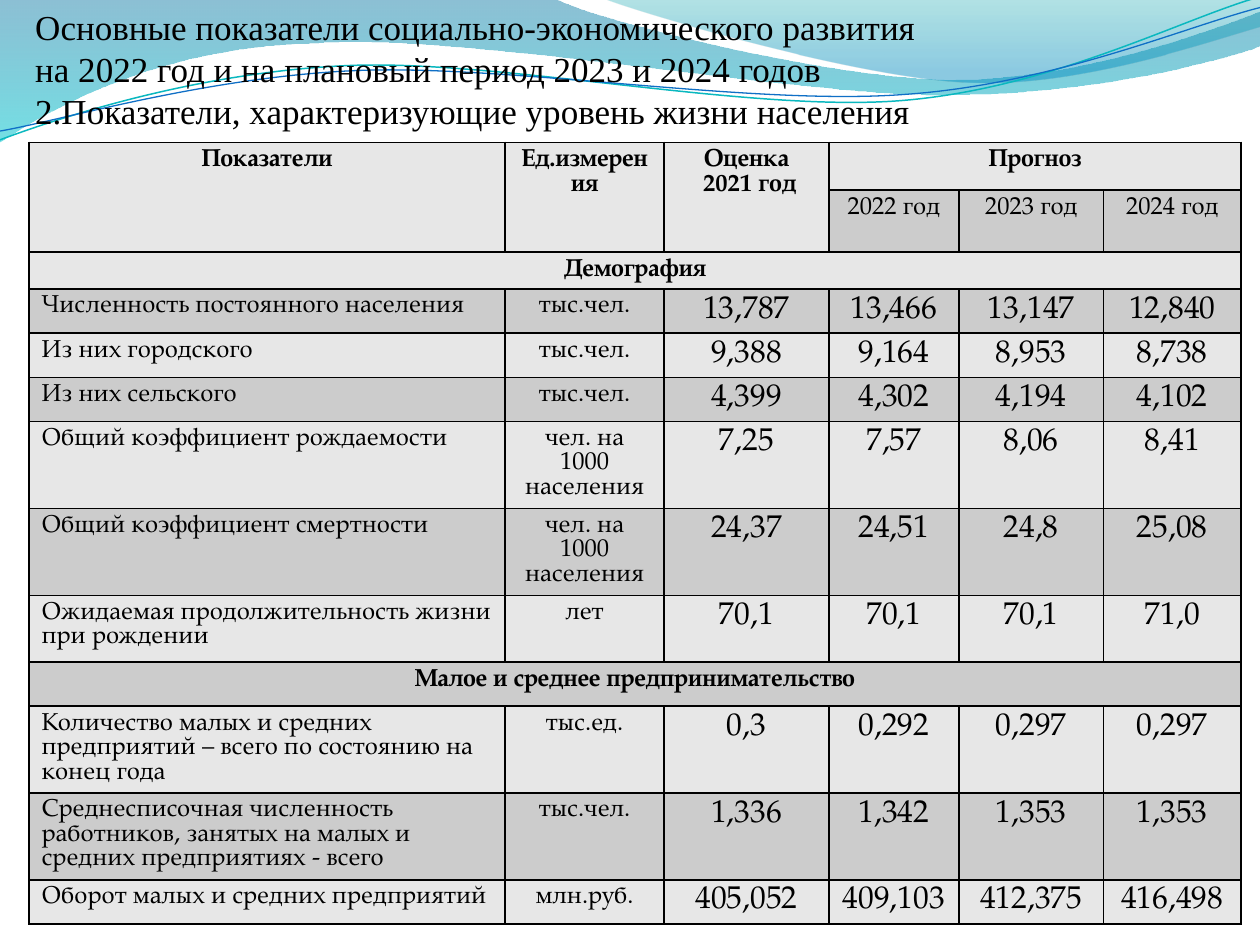
import math

import pptx
import pptx.dml.color
import pptx.enum.text
import pptx.oxml
import pptx.oxml.ns
import pptx.util
from pptx.util import Inches

TABLE_FONT = "TeX Gyre Pagella"
TITLE_FONT = "Times New Roman"
BLACK = "000000"
ROW_FILLS = ("E7E7E7", "CCCCCC")
CENTER = pptx.enum.text.PP_ALIGN.CENTER
LEFT = pptx.enum.text.PP_ALIGN.LEFT

TITLE = ("Основные показатели социально-экономического развития \v"
         "на 2022 год и на плановый период 2023 и 2024 годов \v"
         "2.Показатели, характеризующие уровень жизни населения")

COLUMN_WIDTHS = (3.78, 1.26, 1.31, 1.03, 1.15, 1.09)
ROW_HEIGHTS = (0.38, 0.47, 0.29, 0.35, 0.35, 0.35, 0.69, 0.69, 0.53, 0.35, 0.69, 0.69, 0.35)
ROWS = [
    ("Показатели", "Ед.измерения", "Оценка\n 2021 год", "Прогноз"),
    ("", "", "", "2022 год", "2023 год", "2024 год"),
    ("Демография",),
    ("Численность постоянного населения", "тыс.чел.", "13,787", "13,466", "13,147", "12,840"),
    ("Из них городского", "тыс.чел.", "9,388", "9,164", "8,953", "8,738"),
    ("Из них сельского", "тыс.чел.", "4,399", "4,302", "4,194", "4,102"),
    ("Общий коэффициент рождаемости", "чел. на 1000 населения", "7,25", "7,57", "8,06", "8,41"),
    ("Общий коэффициент смертности", "чел. на 1000 населения", "24,37", "24,51", "24,8", "25,08"),
    ("Ожидаемая продолжительность жизни при рождении", "лет", "70,1", "70,1", "70,1", "71,0"),
    ("Малое и среднее предпринимательство",),
    ("Количество малых и средних предприятий – всего по состоянию на конец года",
     "тыс.ед.", "0,3", "0,292", "0,297", "0,297"),
    ("Среднесписочная численность работников, занятых на малых и средних предприятиях - всего",
     "тыс.чел.", "1,336", "1,342", "1,353", "1,353"),
    ("Оборот малых и средних предприятий", "млн.руб.", "405,052", "409,103", "412,375", "416,498"),
]
HEADER_ROWS = 2
SECTION_ROWS = [r for r, texts in enumerate(ROWS) if len(texts) == 1]

# Each wave is a start point followed by segments: 1 point a line, 3 points a Bézier curve
LEFT_WAVE = [[(0, 0)], [(4.4, -0.01)], [(4.76, 0.17), (6.64, 0.63), (7.58, 0.63)],
             [(8.53, 0.63), (9.58, 0.26), (10, 0.09)], [(10.01, 0.36)],
             [(9.83, 0.44), (8.7, 0.76), (7.46, 0.75)],
             [(6.22, 0.75), (3.82, 0.28), (2.57, 0.34)],
             [(1.29, 0.36), (0.46, 0.83), (-0.01, 1.13)]]
RIGHT_WAVE = [[(4.79, -0.01)], [(5.09, 0.11), (6.82, 0.62), (7.69, 0.65)],
              [(8.56, 0.69), (9.61, 0.32), (10, 0.21)], [(10, 0)]]
TEAL_CURVE = [[(0, 1.11)], [(0.48, 0.93), (1.58, 0.57), (2.77, 0.52)],
              [(3.95, 0.47), (5.93, 0.89), (7.13, 0.8)],
              [(8.33, 0.71), (9.38, 0.15), (9.98, -0.02)]]
BLUE_CURVE = [[(0, 1.04)], [(0.47, 0.96), (1.64, 0.61), (2.83, 0.56)],
              [(4.03, 0.51), (5.97, 0.84), (7.17, 0.75)],
              [(8.36, 0.67), (9.41, 0.21), (10, 0.06)]]
CURVE_TILT = 2.7


def color(hex_code):
    return pptx.dml.color.RGBColor.from_string(hex_code)


def add_outline(slide, segments, close):
    """Add a freeform, then join each three-point segment into a Bézier curve."""
    points = [(Inches(x), Inches(y)) for segment in segments for x, y in segment]
    builder = slide.shapes.build_freeform(*points[0])
    builder.add_line_segments(points[1:], close=close)
    outline = builder.convert_to_shape()
    outline.shadow.inherit = False
    lines = iter(outline.element.findall(".//" + pptx.oxml.ns.qn("a:lnTo")))
    for segment in segments[1:]:
        first, *others = [next(lines) for _ in segment]
        if others:
            first.tag = pptx.oxml.ns.qn("a:cubicBezTo")
            for other in others:
                first.append(other[0])
                other.getparent().remove(other)
    return outline


def add_wave(slide, segments, stops):
    """Add a filled wave; stops are (position %, colour, opacity %)."""
    wave = add_outline(slide, segments, close=True)
    wave.line.fill.background()
    stop_xml = "".join(
        f'<a:gs pos="{position * 1000}"><a:srgbClr val="{hex_code}">'
        f'<a:alpha val="{opacity * 1000}"/></a:srgbClr></a:gs>'
        for position, hex_code, opacity in stops)
    gradient = pptx.oxml.parse_xml(
        f'<a:gradFill {pptx.oxml.ns.nsdecls("a")}><a:gsLst>{stop_xml}</a:gsLst>'
        '<a:lin ang="5400000" scaled="0"/></a:gradFill>')
    wave.element.spPr.find(pptx.oxml.ns.qn("a:custGeom")).addnext(gradient)


def level(segments, center_x=4.99, center_y=0.58):
    """Turn a tilted curve back to level around its centre."""
    cos, sin = math.cos(math.radians(CURVE_TILT)), math.sin(math.radians(CURVE_TILT))
    return [[(center_x + (x - center_x) * cos - (y - center_y) * sin,
              center_y + (x - center_x) * sin + (y - center_y) * cos)
             for x, y in segment] for segment in segments]


def add_curve(slide, segments, hex_code, width):
    curve = add_outline(slide, level(segments), close=False)
    curve.rotation = 360 - CURVE_TILT
    curve.fill.background()
    curve.line.color.rgb = color(hex_code)
    curve.line.width = pptx.util.Pt(width)


def style_paragraph(paragraph, font_name, size, spacing, bold=False, align=LEFT):
    paragraph.alignment = align
    paragraph.line_spacing = pptx.util.Pt(spacing)
    paragraph.font.name = font_name
    paragraph.font.size = pptx.util.Pt(size)
    paragraph.font.bold = bold
    paragraph.font.color.rgb = color(BLACK)


def add_title(slide):
    title = slide.shapes.add_textbox(Inches(0.28), Inches(-0.35), Inches(9.53), Inches(1.39))
    frame = title.text_frame
    frame.word_wrap = True
    frame.vertical_anchor = pptx.enum.text.MSO_ANCHOR.BOTTOM
    frame.margin_left = frame.margin_right = frame.margin_bottom = 0
    frame.text = TITLE
    style_paragraph(frame.paragraphs[0], TITLE_FONT, 20, 24)


def set_borders(cell):
    properties = cell._tc.get_or_add_tcPr()
    for position, side in enumerate(("lnL", "lnR", "lnT", "lnB")):
        properties.insert(position, pptx.oxml.parse_xml(
            f'<a:{side} {pptx.oxml.ns.nsdecls("a")} w="12700"><a:solidFill>'
            f'<a:srgbClr val="{BLACK}"/></a:solidFill></a:{side}>'))


def fill_cell(cell, text, row, column):
    cell.fill.solid()
    cell.fill.fore_color.rgb = color(ROW_FILLS[row % 2])
    set_borders(cell)
    cell.text = text
    is_section = row in SECTION_ROWS
    is_value = row >= HEADER_ROWS and not is_section and column >= 2
    is_label = row >= HEADER_ROWS and not is_section and column == 0
    size = 18 if is_value else 14
    for paragraph in cell.text_frame.paragraphs:
        style_paragraph(paragraph, TABLE_FONT, size, size, bold=row == 0 or is_section,
                        align=LEFT if is_label else CENTER)


def add_indicator_table(slide):
    last_column = len(COLUMN_WIDTHS) - 1
    table = slide.shapes.add_table(
        len(ROWS), len(COLUMN_WIDTHS), Inches(0.23), Inches(1.13),
        Inches(sum(COLUMN_WIDTHS)), Inches(sum(ROW_HEIGHTS))).table
    table.first_row = table.horz_banding = False
    for column, width in zip(table.columns, COLUMN_WIDTHS):
        column.width = Inches(width)
    for row, height in zip(table.rows, ROW_HEIGHTS):
        row.height = Inches(height)
    for r, texts in enumerate(ROWS):
        for c in range(last_column + 1):
            fill_cell(table.cell(r, c), texts[c] if c < len(texts) else "", r, c)

    # Header cells and section headings span several cells
    for c in range(3):
        table.cell(0, c).merge(table.cell(1, c))
    table.cell(0, 3).merge(table.cell(0, last_column))
    for r in SECTION_ROWS:
        table.cell(r, 0).merge(table.cell(r, last_column))


def main():
    presentation = pptx.Presentation()
    presentation.slide_width = Inches(10)
    presentation.slide_height = Inches(7.5)
    slide = presentation.slides.add_slide(presentation.slide_layouts[6])

    # Waves along the top edge
    add_wave(slide, LEFT_WAVE, [(0, "0074A1", 45), (100, "00C6CF", 55)])
    add_wave(slide, RIGHT_WAVE, [(0, "00A1A9", 30), (80, "008BBF", 45)])
    add_curve(slide, TEAL_CURVE, "0AB8BF", 0.85)
    add_curve(slide, BLUE_CURVE, "0F6FC6", 0.75)

    # Title and indicators
    add_title(slide)
    add_indicator_table(slide)
    presentation.save("out.pptx")


if __name__ == "__main__":
    main()
